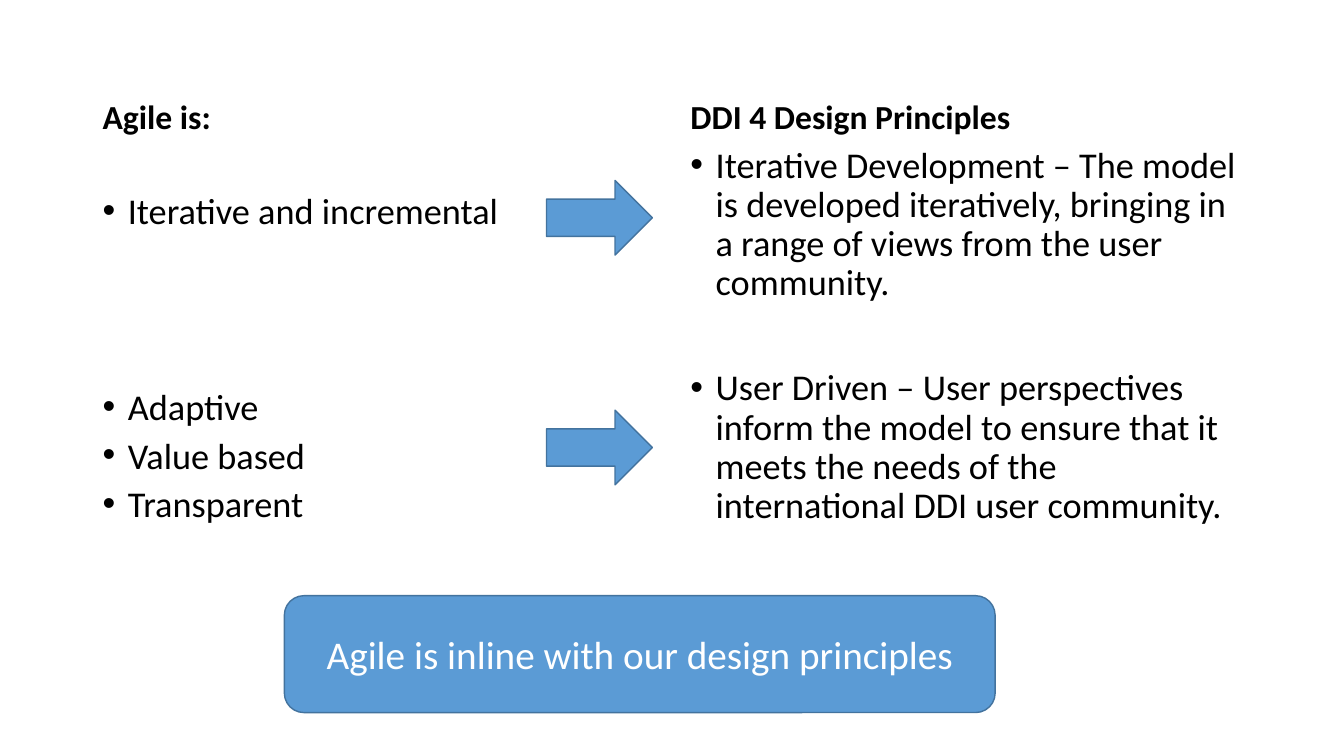
import pptx
import pptx.util
import pptx.dml.color
import pptx.enum.shapes
import pptx.enum.text
import pptx.oxml.ns
import lxml.etree

Inches, Pt = pptx.util.Inches, pptx.util.Pt
SHAPE = pptx.enum.shapes.MSO_SHAPE
ANCHOR = pptx.enum.text.MSO_ANCHOR
COLOURS = {"text": "000000", "fill": "5B9BD5", "edge": "43739E", "message": "FFFFFF"}
FONT = "Calibri"
HEADING_HEIGHT = 0.9

AGILE = [("Iterative and incremental", 0), ("Adaptive", 115),
         ("Value based", 10), ("Transparent", 10)]
PRINCIPLES = [
    ("Iterative Development – The model is developed iteratively, bringing in "
     "a range of views from the user community.", 0),
    ("User Driven – User perspectives inform the model to ensure that it meets "
     "the needs of the international DDI user community.", 47),
]


def colour(name):
    """Return the named colour."""
    return pptx.dml.color.RGBColor.from_string(COLOURS[name])


def add_run(paragraph, text, size, ink="text", bold=False):
    """Append a styled run to a paragraph."""
    run = paragraph.add_run()
    run.text = text
    run.font.name, run.font.size, run.font.bold = FONT, Pt(size), bold
    run.font.color.rgb = colour(ink)


def add_frame(slide, box, anchor):
    """Add a wrapping text box and return its text frame."""
    frame = slide.shapes.add_textbox(*map(Inches, box)).text_frame
    frame.word_wrap = True
    frame.vertical_anchor = anchor
    return frame


def make_bullet(paragraph):
    """Give a paragraph a hanging round bullet."""
    properties = paragraph._p.get_or_add_pPr()
    properties.set("marL", str(Inches(0.25)))
    properties.set("indent", str(Inches(-0.25)))
    qn = pptx.oxml.ns.qn
    lxml.etree.SubElement(properties, qn("a:buFont")).set("typeface", "Arial")
    lxml.etree.SubElement(properties, qn("a:buChar")).set("char", "•")


def add_column(slide, box, heading, points, spacing, top_inset=0.05):
    """Place a heading above its bulleted points in the given box."""
    left, top, width, height = box
    title = add_frame(slide, (left, top, width, HEADING_HEIGHT), ANCHOR.BOTTOM)
    title.paragraphs[0].line_spacing = 0.9
    add_run(title.paragraphs[0], heading, 24, bold=True)

    body = add_frame(slide, (left, top + HEADING_HEIGHT, width, height - HEADING_HEIGHT),
                     ANCHOR.TOP)
    body.margin_top = Inches(top_inset)
    for index, (point, gap) in enumerate(points):
        paragraph = body.add_paragraph() if index else body.paragraphs[0]
        paragraph.line_spacing = spacing
        paragraph.space_before = Pt(gap)
        make_bullet(paragraph)
        add_run(paragraph, point, 25.9)


def add_block(slide, kind, box):
    """Add a filled and outlined shape."""
    block = slide.shapes.add_shape(kind, *map(Inches, box))
    block.shadow.inherit = False
    block.fill.solid()
    block.fill.fore_color.rgb = colour("fill")
    block.line.color.rgb = colour("edge")
    block.line.width = Pt(1)
    return block


def add_arrows(slide, box, step, count):
    """Repeat a right arrow downwards from the given box."""
    left, top, width, height = box
    for row in range(count):
        add_block(slide, SHAPE.RIGHT_ARROW, (left, top + row * step, width, height))


def add_conclusion(slide, box, message):
    """Place the closing message in a rounded box."""
    frame = add_block(slide, SHAPE.ROUNDED_RECTANGLE, box).text_frame
    frame.word_wrap = True
    frame.vertical_anchor = ANCHOR.MIDDLE
    frame.paragraphs[0].alignment = pptx.enum.text.PP_ALIGN.CENTER
    add_run(frame.paragraphs[0], message, 28, "message")


def main():
    """Build and save the slide."""
    deck = pptx.Presentation()
    deck.slide_width, deck.slide_height = Inches(13.33), Inches(7.5)
    slide = deck.slides.add_slide(deck.slide_layouts[6])
    add_column(slide, (0.92, 0.51, 5.64, 4.93), "Agile is:", AGILE, 0.8, 0.54)
    add_column(slide, (6.75, 0.51, 5.67, 4.93), "DDI 4 Design Principles", PRINCIPLES, 0.9)
    add_arrows(slide, (5.42, 1.79, 1.05, 0.74), 2.28, 2)
    add_conclusion(slide, (2.82, 5.91, 7.05, 1.16), "Agile is inline with our design principles")
    deck.save("out.pptx")


if __name__ == "__main__":
    main()
